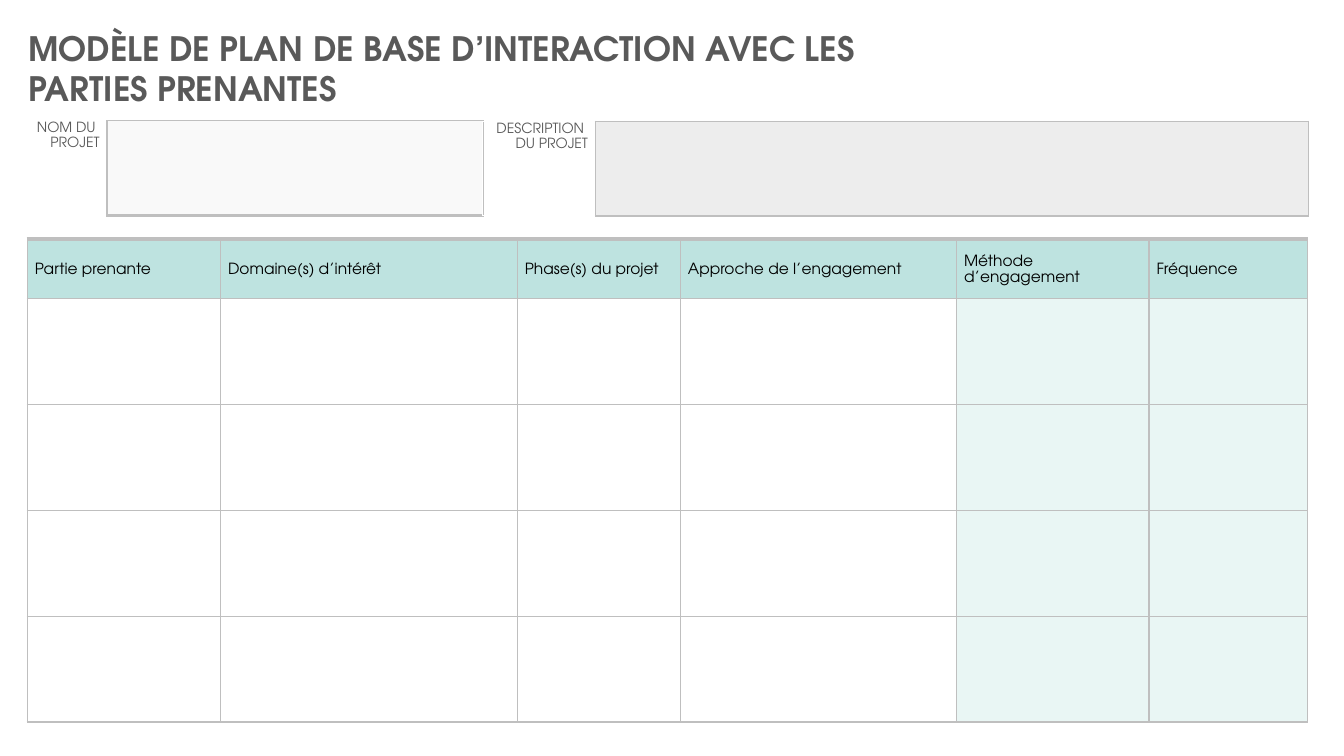
from lxml.etree import SubElement
from pptx import Presentation
from pptx.dml.color import RGBColor
from pptx.enum.text import MSO_ANCHOR, PP_ALIGN
from pptx.oxml.ns import qn
from pptx.util import Pt

FONT = "TeX Gyre Adventor"
GREY_TEXT = RGBColor(0x59, 0x59, 0x59)
BLACK = RGBColor(0, 0, 0)
WHITE = RGBColor(0xFF, 0xFF, 0xFF)
BORDER = RGBColor(0xBF, 0xBF, 0xBF)
NAME_FILL = RGBColor(0xF9, 0xF9, 0xF9)
DESCRIPTION_FILL = RGBColor(0xED, 0xED, 0xED)
HEADER_FILL = RGBColor(0xBE, 0xE3, 0xE0)
PALE_TEAL = RGBColor(0xE9, 0xF6, 0xF4)


def style_cell(cell, fill, **borders):
    """Border widths in points are keyed by L, R, T and B."""
    properties = cell._tc.get_or_add_tcPr()
    for side in "LRTB":
        if side in borders:
            line = SubElement(properties, qn(f"a:ln{side}"), w=str(Pt(borders[side])))
            solid = SubElement(line, qn("a:solidFill"))
            SubElement(solid, qn("a:srgbClr"), val=str(BORDER))
    if fill is None:
        cell.fill.background()
    else:
        cell.fill.solid()
        cell.fill.fore_color.rgb = fill


def write_cell(cell, text, size, color, alignment, anchor):
    cell.margin_left = cell.margin_right = Pt(5.4)
    cell.margin_top = cell.margin_bottom = 0
    cell.vertical_anchor = anchor
    cell.text_frame.text = text
    paragraph = cell.text_frame.paragraphs[0]
    paragraph.alignment = alignment
    paragraph.line_spacing = 1.15
    for run in paragraph.runs:
        run.font.name = FONT
        run.font.size = Pt(size)
        run.font.color.rgb = color


presentation = Presentation()
presentation.slide_width = Pt(960)
presentation.slide_height = Pt(540)
slide = presentation.slides.add_slide(presentation.slide_layouts[6])

# Title
title = slide.shapes.add_textbox(Pt(13), Pt(16.5), Pt(657.4), Pt(36))
title.text_frame.word_wrap = True
title.text_frame.text = "MODÈLE DE PLAN DE BASE D’INTERACTION AVEC LES PARTIES PRENANTES"
title_font = title.text_frame.paragraphs[0].runs[0].font
title_font.name = FONT
title_font.size = Pt(24)
title_font.bold = True
title_font.color.rgb = GREY_TEXT

# Project name and description: a label beside a box to fill in
project_fields = [
    ("NOM DU \vPROJET", 13, 86.2, 63.4, 268.8, NAME_FILL),
    ("DESCRIPTION \vDU PROJET", 344.9, 86.7, 80.4, 509.6, DESCRIPTION_FILL),
]
for label, left, top, label_width, box_width, box_fill in project_fields:
    table = slide.shapes.add_table(
        1, 2, Pt(left), Pt(top), Pt(label_width + box_width), Pt(67.5)).table
    table.first_row = table.horz_banding = False
    table.columns[0].width = Pt(label_width)
    table.columns[1].width = Pt(box_width)
    label_cell, box_cell = table.cell(0, 0), table.cell(0, 1)
    style_cell(label_cell, None, R=1)
    write_cell(label_cell, label, 10, GREY_TEXT, PP_ALIGN.RIGHT, MSO_ANCHOR.TOP)
    style_cell(box_cell, box_fill, L=1, R=1, T=1, B=2.25)

# Engagement plan: header row and four empty rows
headers = ["Partie prenante", "Domaine(s) d’intérêt", "Phase(s) du projet",
           "Approche de l’engagement", "Méthode d’engagement", "Fréquence"]
column_widths = [138, 212, 116.5, 197.3, 137.5, 113.5]
row_heights = [42.5] + [75.6] * 4
plan = slide.shapes.add_table(
    len(row_heights), len(headers), Pt(19.5), Pt(170.9),
    Pt(sum(column_widths)), Pt(sum(row_heights))).table
plan.first_row = plan.horz_banding = False
for row, height in zip(plan.rows, row_heights):
    row.height = Pt(height)
for index, (header, width) in enumerate(zip(headers, column_widths)):
    plan.columns[index].width = Pt(width)
    style_cell(plan.cell(0, index), HEADER_FILL, L=1, R=1, T=3, B=1)
    write_cell(plan.cell(0, index), header, 11, BLACK, PP_ALIGN.LEFT, MSO_ANCHOR.MIDDLE)
    for row_index in range(1, len(row_heights)):
        body_fill = WHITE if index < 4 else PALE_TEAL
        style_cell(plan.cell(row_index, index), body_fill, L=1, R=1, T=1, B=1)

presentation.save("out.pptx")
